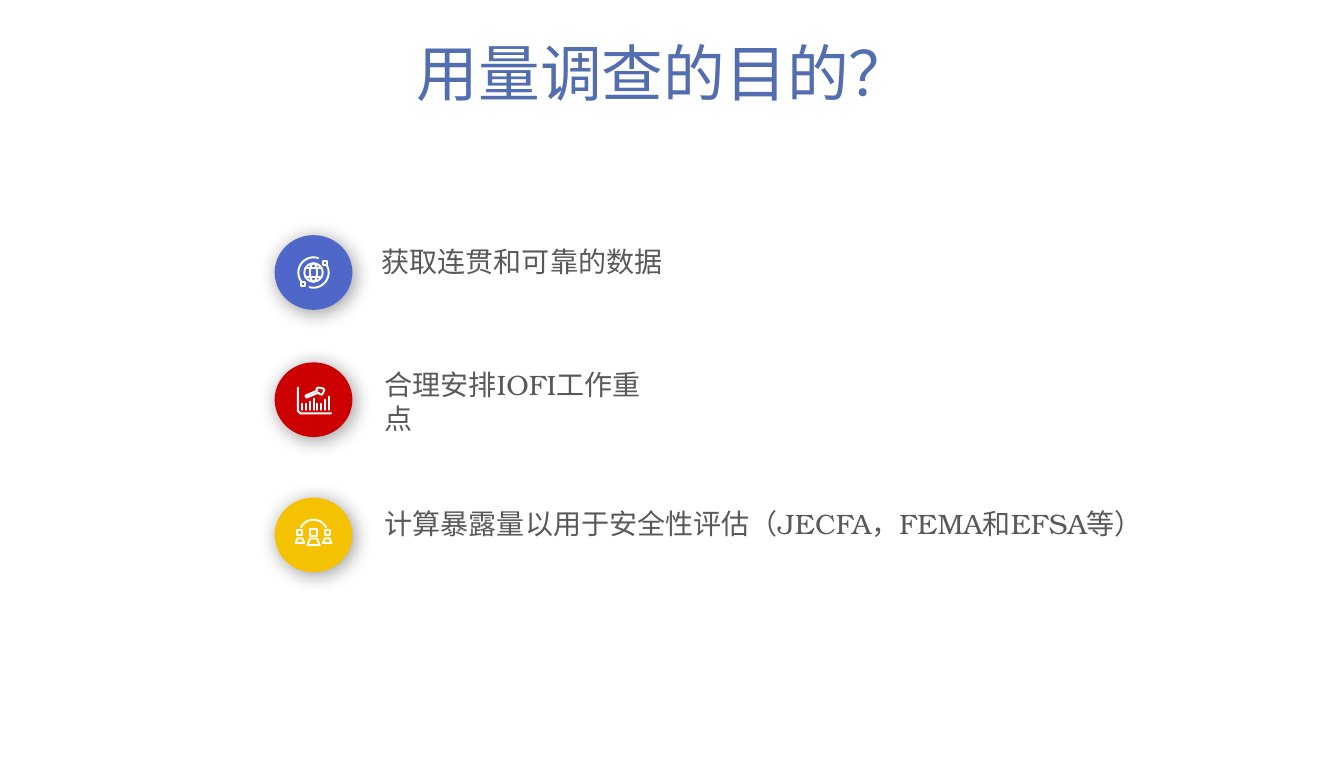
from dataclasses import dataclass
from math import cos, radians, sin
from lxml.etree import SubElement
from pptx import Presentation
from pptx.dml.color import RGBColor
from pptx.enum.shapes import MSO_CONNECTOR, MSO_SHAPE
from pptx.enum.text import MSO_ANCHOR, MSO_AUTO_SIZE, PP_ALIGN
from pptx.oxml.ns import qn
from pptx.util import Inches, Pt


@dataclass(frozen=True)
class Theme:
    font: str = "TeX Gyre Bonum"
    head: str = "526DB0"
    body: str = "595959"
    white: str = "FFFFFF"
    shade: str = "000000"
    big: int = 44
    small: int = 20
    pen: float = 1.4


THEME = Theme()
TITLE = "用量调查的目的？"
ROWS = [
    {"icon": "globe", "fill": "4E67C8", "top": 2.33,
     "text": "获取连贯和可靠的数据", "box": (3.68, 2.37, 2.98, 0.67)},
    {"icon": "chart", "fill": "CC0000", "top": 3.59,
     "text": "合理安排IOFI工作重点", "box": (3.71, 3.59, 2.97, 0.67)},
    {"icon": "people", "fill": "F5C201", "top": 4.93,
     "text": "计算暴露量以用于安全性评估（JECFA，FEMA和EFSA等）",
     "box": (3.71, 4.97, 8.29, 0.67)},
]
DISC_LEFT, DISC_WIDE, DISC_HIGH = 2.72, 0.77, 0.74
BAR_TOPS = [4, 4, 2, -1, 4, 4, 0, -3]
AXIS = [(-15.5, -12), (-15.5, 11), (-13, 13.5), (17.5, 13.5)]
ARROW = [(-8, -4), (3.5, -9), (3, -11), (5, -12), (10, -11),
         (10.5, -9), (8.5, -5), (6, -5.5), (5, -7), (-7, -2)]


def arc(x, y, wide, high, start=0, end=360, steps=40):
    turns = [radians(start + (end - start) * i / steps) for i in range(steps + 1)]
    return [(x + wide * cos(t), y + high * sin(t)) for t in turns]


def square(x, y, half):
    return [(x - half, y - half), (x + half, y - half),
            (x + half, y + half), (x - half, y + half)]


def globe():
    lines = [(arc(0, 0, 9, 9), True), (arc(0, 0, 3.5, 9), True),
             (arc(0, 0, 15, 15, -30, 105), False),
             (arc(0, 0, 15, 15, 145, 288), False),
             (square(11, -9, 2), True), (square(-10, 11, 2), True)]
    return lines + [([(-8, y), (8, y)], False) for y in (-4, 4)]


def chart():
    bars = [([(-11 + 3.7 * i, top), (-11 + 3.7 * i, 10)], False)
            for i, top in enumerate(BAR_TOPS)]
    return [(AXIS, False), (ARROW, True)] + bars


def people():
    lines = [(arc(0, -1, 14, 14, 207, 333), False)]
    for x, size in ((0, 1), (-13.5, 0.7), (13.5, 0.7)):
        neck, hip, foot = 3.5 * size, 6 * size, 3.5 + 6.5 * size
        lines += [(square(x, -2.5, neck), True),
                  ([(x - neck, 3.5), (x + neck, 3.5),
                    (x + hip, foot), (x - hip, foot)], True)]
    return lines


ICONS = {"globe": globe, "chart": chart, "people": people}


def color(code):
    return RGBColor.from_string(code)


def stroke(shapes, points, closed, mid):
    spots = [(Inches(mid[0] + x / 100), Inches(mid[1] + y / 100)) for x, y in points]
    if len(spots) == 2:
        shape = shapes.add_connector(MSO_CONNECTOR.STRAIGHT, *spots[0], *spots[1])
        SubElement(shape.element.spPr, qn("a:effectLst"))
    else:
        pen = shapes.build_freeform(*spots[0], scale=1.0)
        pen.add_line_segments(spots[1:], close=closed)
        shape = pen.convert_to_shape()
        shape.shadow.inherit = False
        shape.fill.background()
    shape.line.color.rgb = color(THEME.white)
    shape.line.width = Pt(THEME.pen)
    shape.element.spPr.find(qn("a:ln")).set("cap", "rnd")


def badge(slide, row):
    shapes = slide.shapes.add_group_shape().shapes
    area = (DISC_LEFT, row["top"], DISC_WIDE, DISC_HIGH)
    disc = shapes.add_shape(MSO_SHAPE.OVAL, *map(Inches, area))
    disc.fill.solid()
    disc.fill.fore_color.rgb = color(row["fill"])
    disc.line.fill.background()
    disc.shadow.inherit = False
    glow = SubElement(disc.element.spPr.find(qn("a:effectLst")), qn("a:outerShdw"),
                      blurRad=str(Pt(14)), dist=str(Pt(3)), dir=str(45 * 60000),
                      algn="tl", rotWithShape="0")
    tint = SubElement(glow, qn("a:srgbClr"), val=THEME.shade)
    SubElement(tint, qn("a:alpha"), val="40000")
    mid = (DISC_LEFT + DISC_WIDE / 2, row["top"] + DISC_HIGH / 2)
    for points, closed in ICONS[row["icon"]]():
        stroke(shapes, points, closed, mid)


def write(shape, text, size, code, align):
    frame = shape.text_frame
    frame.word_wrap = True
    frame.auto_size = MSO_AUTO_SIZE.NONE
    frame.vertical_anchor = MSO_ANCHOR.TOP
    para = frame.paragraphs[0]
    para.alignment = align
    run = para.add_run()
    run.text = text
    run.font.name = THEME.font
    run.font.size = Pt(size)
    run.font.color.rgb = color(code)


def main():
    deck = Presentation()
    deck.slide_width, deck.slide_height = Inches(13.31), Inches(7.5)
    slide = deck.slides.add_slide(deck.slide_layouts[5])
    title = slide.shapes.title
    title.left, title.top, title.width, title.height = map(Inches, (0.12, 0.3, 12.91, 1.25))
    write(title, TITLE, THEME.big, THEME.head, PP_ALIGN.CENTER)
    for row in ROWS:
        badge(slide, row)
        label = slide.shapes.add_textbox(*map(Inches, row["box"]))
        write(label, row["text"], THEME.small, THEME.body, PP_ALIGN.LEFT)
    deck.save("out.pptx")


if __name__ == "__main__":
    main()
